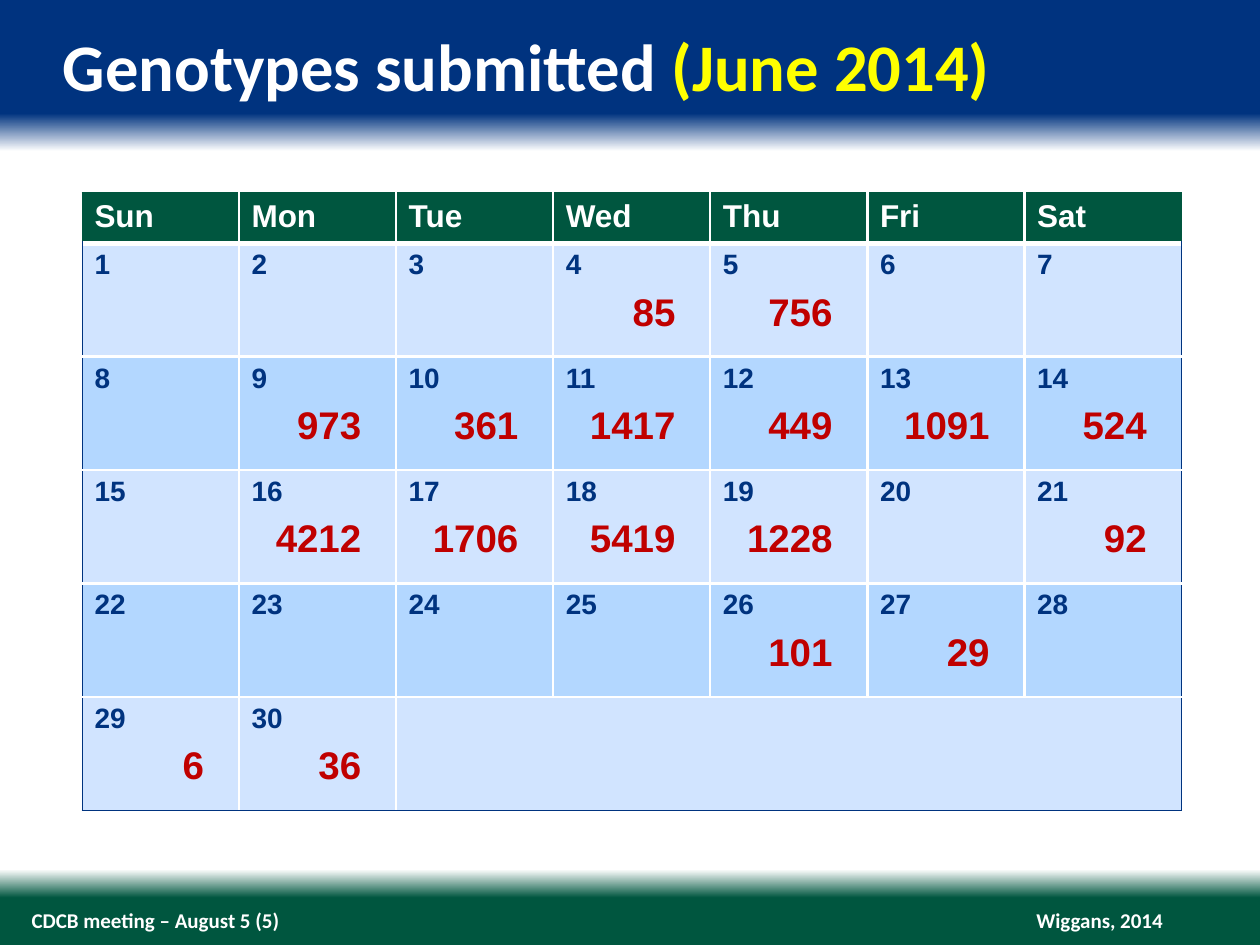
import pptx
import pptx.dml.color
import pptx.enum.text
import pptx.oxml
import pptx.oxml.ns
import pptx.util

RGBColor = pptx.dml.color.RGBColor
Inches = pptx.util.Inches
Pt = pptx.util.Pt
Anchor = pptx.enum.text.MSO_ANCHOR
Align = pptx.enum.text.PP_ALIGN
qn = pptx.oxml.ns.qn
DRAWING_NS = pptx.oxml.ns.nsdecls("a")

NAVY = RGBColor(0x00, 0x33, 0x7F)
GREEN = RGBColor(0x00, 0x56, 0x3F)
WHITE = RGBColor(0xFF, 0xFF, 0xFF)
YELLOW = RGBColor(0xFF, 0xFF, 0x00)
RED = RGBColor(0xC0, 0x00, 0x00)
PALE_BLUE = RGBColor(0xD1, 0xE4, 0xFF)
SKY_BLUE = RGBColor(0xB3, 0xD7, 0xFF)

BACKDROP = [(0, NAVY), (12, NAVY), (16, WHITE), (92, WHITE), (95, GREEN), (100, GREEN)]
WEEKDAYS = ["Sun", "Mon", "Tue", "Wed", "Thu", "Fri", "Sat"]
DAYS_IN_MONTH = 30
WEEKS = 5
GENOTYPES = {
    4: 85, 5: 756,
    9: 973, 10: 361, 11: 1417, 12: 449, 13: 1091, 14: 524,
    16: 4212, 17: 1706, 18: 5419, 19: 1228, 21: 92,
    26: 101, 27: 29,
    29: 6, 30: 36,
}
HEADER_HEIGHT = 0.38
COUNT_TAB = 0.87


def paint_backdrop(slide):
    fill = slide.background.fill
    fill.gradient()
    fill.gradient_angle = 270
    stops = next(slide.element.iter(qn("a:gsLst")))
    for stop in list(stops):
        stops.remove(stop)
    for percent, color in BACKDROP:
        stops.append(pptx.oxml.parse_xml(
            f'<a:gs {DRAWING_NS} pos="{percent * 1000}"><a:srgbClr val="{color}"/></a:gs>'))


def style_run(run, size, color, font="Arial"):
    run.font.name = font
    run.font.size = Pt(size)
    run.font.bold = True
    run.font.color.rgb = color


def add_line_of_text(slide, box, parts, size, anchor=Anchor.MIDDLE,
                     align=Align.LEFT, wrap=True):
    """Place one line made of (text, color) parts in a box without insets."""
    frame = slide.shapes.add_textbox(*map(Inches, box)).text_frame
    frame.margin_left = frame.margin_right = frame.margin_top = frame.margin_bottom = 0
    frame.word_wrap = wrap
    frame.auto_size = pptx.enum.text.MSO_AUTO_SIZE.SHAPE_TO_FIT_TEXT
    frame.vertical_anchor = anchor
    line = frame.paragraphs[0]
    line.alignment = align
    for text, color in parts:
        run = line.add_run()
        run.text = text
        style_run(run, size, color, "Calibri")


def set_borders(cell, **edges):
    """Draw the edges L, R, T and B, each given as (color, points)."""
    properties = cell._tc.get_or_add_tcPr()
    for side in "LRTB":
        color, width = edges[side]
        properties.append(pptx.oxml.parse_xml(
            f'<a:ln{side} {DRAWING_NS} w="{int(Pt(width))}"><a:solidFill>'
            f'<a:srgbClr val="{color}"/></a:solidFill></a:ln{side}>'))


def style_cell(cell, row, column):
    header = row == 0
    outer = (GREEN if header else NAVY, 0.25)
    inner = (WHITE, 1.5)
    top = (GREEN, 1) if header else (WHITE, 3) if row == 1 else inner
    bottom = (WHITE, 3) if header else outer if row == WEEKS else inner
    last_column = column == len(WEEKDAYS) - 1 or cell.is_merge_origin
    set_borders(cell, L=outer if column == 0 else inner,
                R=outer if last_column else inner, T=top, B=bottom)
    cell.fill.solid()
    cell.fill.fore_color.rgb = GREEN if header else PALE_BLUE if row % 2 else SKY_BLUE


def write_day(cell, day):
    count = GENOTYPES.get(day)
    cell.text_frame.text = str(day) if count is None else f"{day}\n\t{count}"
    date, *counts = cell.text_frame.paragraphs
    style_run(date.runs[0], 16, NAVY)
    for line in counts:
        date.space_after = Pt(6)
        line._p.get_or_add_pPr().append(pptx.oxml.parse_xml(
            f'<a:tabLst {DRAWING_NS}><a:tab pos="{int(Inches(COUNT_TAB))}" algn="r"/></a:tabLst>'))
        style_run(line.runs[0], 22, RED)


def add_calendar(slide, box):
    left, top, width, height = map(Inches, box)
    columns = len(WEEKDAYS)
    calendar = slide.shapes.add_table(WEEKS + 1, columns, left, top, width, height).table
    week_height = (height - Inches(HEADER_HEIGHT)) // WEEKS
    for row_number, row in enumerate(calendar.rows):
        row.height = week_height if row_number else Inches(HEADER_HEIGHT)

    first_unused = DAYS_IN_MONTH % columns
    calendar.cell(WEEKS, first_unused).merge(calendar.cell(WEEKS, columns - 1))

    for row in range(WEEKS + 1):
        for column, weekday in enumerate(WEEKDAYS):
            cell = calendar.cell(row, column)
            style_cell(cell, row, column)
            day = (row - 1) * columns + column + 1
            if row == 0:
                cell.text_frame.text = weekday
                style_run(cell.text_frame.paragraphs[0].runs[0], 18, WHITE)
            elif day <= DAYS_IN_MONTH:
                write_day(cell, day)


def add_footer(slide, top, height):
    add_line_of_text(slide, (8.21, top, 1.02, height), [("Wiggans, 2014", WHITE)], 12,
                     align=Align.RIGHT, wrap=False)
    add_line_of_text(slide, (0.25, top, 5.22, height),
                     [("CDCB meeting – August 5 (5)", WHITE)], 12)


def main():
    deck = pptx.Presentation()
    deck.slide_width, deck.slide_height = Inches(10), Inches(7.5)
    slide = deck.slides.add_slide(deck.slide_layouts[6])
    paint_backdrop(slide)
    add_footer(slide, 7.2, 0.2)
    add_line_of_text(slide, (0.5, 0.2, 9, 0.64),
                     [("Genotypes submitted ", WHITE), ("(June 2014)", YELLOW)], 38,
                     anchor=Anchor.TOP)
    add_calendar(slide, (0.65, 1.53, 8.73, 4.88))
    deck.save("out.pptx")


if __name__ == "__main__":
    main()
